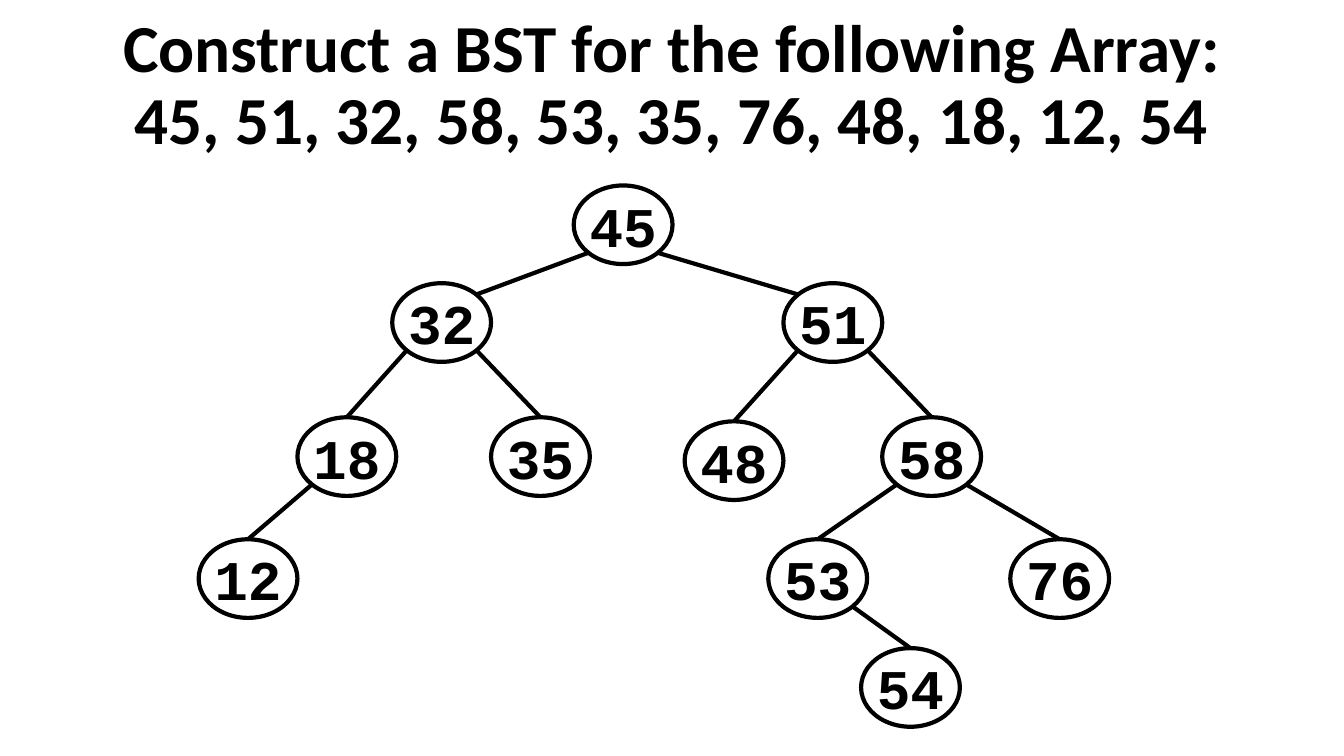
from dataclasses import dataclass
from math import sqrt
from typing import Optional

from lxml.etree import SubElement
from pptx import Presentation
from pptx.dml.color import RGBColor
from pptx.enum.shapes import MSO_CONNECTOR, MSO_SHAPE
from pptx.enum.text import MSO_ANCHOR, PP_ALIGN
from pptx.oxml.ns import qn
from pptx.shapes.autoshape import Shape
from pptx.slide import Slide
from pptx.text.text import TextFrame
from pptx.util import Emu, Pt

COLORS = {"ink": "000000"}
INK = RGBColor.from_string(COLORS["ink"])
PX_PER_INCH = 100
NODE_WIDTH, NODE_HEIGHT = 98, 78
LINE_WIDTH = Pt(3)


@dataclass(frozen=True)
class Node:
    key: int
    left: int
    top: int

    def rim(self, side: int, vertical: int) -> tuple[int, int]:
        """Point on the oval's diagonal; -1 is left or top, 1 is right or bottom."""
        return (
            round(self.left + NODE_WIDTH / 2 * (1 + side / sqrt(2))),
            round(self.top + NODE_HEIGHT / 2 * (1 + vertical / sqrt(2))),
        )


# In the order in which the keys are inserted into the tree
NODES = [
    Node(45, 569, 184),
    Node(51, 777, 281),
    Node(32, 389, 281),
    Node(58, 875, 414),
    Node(53, 762, 535),
    Node(35, 487, 414),
    Node(76, 1002, 535),
    Node(48, 679, 418),
    Node(18, 295, 414),
    Node(12, 197, 535),
    Node(54, 854, 643),
]


def px(length: int) -> Emu:
    return Emu(length * 914400 // PX_PER_INCH)


def find_parent(index: int) -> Optional[Node]:
    """The parent is the nearest earlier key below or above, whichever came later."""
    key, earlier = NODES[index].key, NODES[:index]
    below = max((n for n in earlier if n.key < key), key=lambda n: n.key, default=None)
    above = min((n for n in earlier if n.key > key), key=lambda n: n.key, default=None)
    neighbours = [n for n in (below, above) if n is not None]
    return max(neighbours, key=NODES.index, default=None)


def write_bold(frame: TextFrame, text: str, font_name: str, size: int) -> None:
    frame.vertical_anchor = MSO_ANCHOR.MIDDLE
    paragraph = frame.paragraphs[0]
    paragraph.text = text
    paragraph.alignment = PP_ALIGN.CENTER
    for run in paragraph.runs:
        run.font.name = font_name
        run.font.size = Pt(size)
        run.font.bold = True
        run.font.color.rgb = INK


def add_title(slide: Slide) -> None:
    title = slide.shapes.add_textbox(px(0), px(6), px(1333), px(160))
    title.text_frame.word_wrap = True
    array = ", ".join(str(node.key) for node in NODES)
    write_bold(title.text_frame,
               f"Construct a BST for the following Array:\n{array}", "Calibri", 48)
    title.text_frame.paragraphs[0].line_spacing = 0.9


def add_node(slide: Slide, node: Node) -> Shape:
    oval = slide.shapes.add_shape(
        MSO_SHAPE.OVAL, px(node.left), px(node.top), px(NODE_WIDTH), px(NODE_HEIGHT))
    oval.shadow.inherit = False
    oval.fill.background()
    oval.line.color.rgb = INK
    oval.line.width = LINE_WIDTH
    frame = oval.text_frame
    frame.word_wrap = False
    frame.margin_left = frame.margin_right = px(0)
    frame.margin_top = frame.margin_bottom = px(5)
    write_bold(frame, str(node.key), "Courier New", 40)
    return oval


def add_branch(slide: Slide, parent: Node, child: Node, child_oval: Shape) -> None:
    """Join parent and child; the root's flat branches meet the child's near shoulder."""
    side = 1 if child.key > parent.key else -1
    start, end = parent.rim(side, 1), child.rim(-side, -1)
    branch = slide.shapes.add_connector(
        MSO_CONNECTOR.STRAIGHT, *(px(value) for value in start + end))
    if parent != NODES[0]:
        branch.end_connect(child_oval, 0)
    branch.line.color.rgb = INK
    branch.line.width = LINE_WIDTH
    SubElement(branch._element.spPr, qn("a:effectLst"))


def main() -> None:
    presentation = Presentation()
    presentation.slide_width, presentation.slide_height = px(1333), px(750)
    slide = presentation.slides.add_slide(presentation.slide_layouts[6])
    add_title(slide)
    ovals = [add_node(slide, node) for node in NODES]
    for index, (node, oval) in enumerate(zip(NODES, ovals)):
        parent = find_parent(index)
        if parent is not None:
            add_branch(slide, parent, node, oval)
    presentation.save("out.pptx")


if __name__ == "__main__":
    main()
